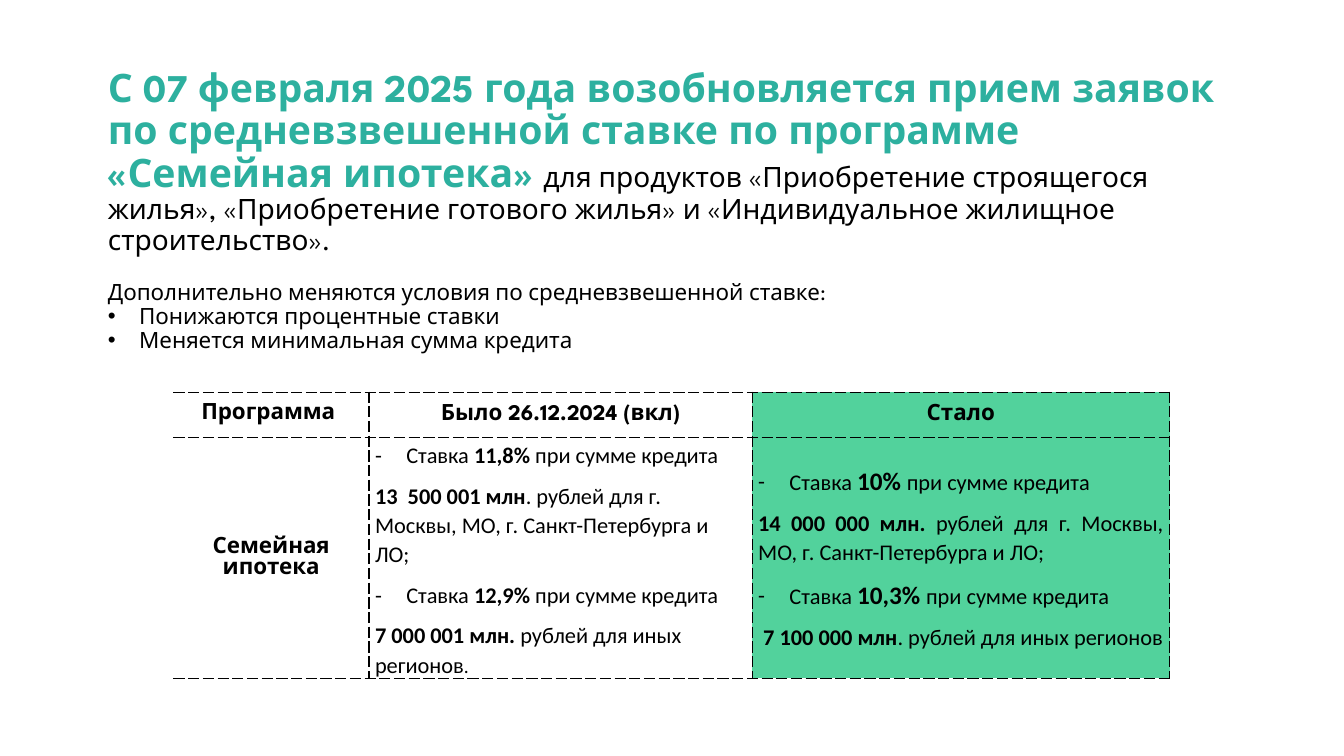
import pptx
import pptx.util
import pptx.dml.color
import pptx.enum.text
import pptx.oxml
import pptx.oxml.ns
from pptx.util import Inches

RGBColor = pptx.dml.color.RGBColor
TEAL = RGBColor(0x2D, 0xB0, 0x9F)
MINT = RGBColor(0x52, 0xD2, 0x9C)
BLACK = RGBColor(0, 0, 0)
ALIGN = pptx.enum.text.PP_ALIGN
ANCHOR = pptx.enum.text.MSO_ANCHOR
HEAD = "League Spartan"
BODY = "Calibri"
SPACE = pptx.oxml.ns.nsdecls("a")


def add_run(para, text, size, bold=False, font=HEAD, color=BLACK):
    run = para.add_run()
    run.text = text
    run.font.size = pptx.util.Pt(size)
    run.font.bold = bold
    run.font.name = font
    run.font.color.rgb = color


def set_bullet(para, mark, font):
    props = para._p.get_or_add_pPr()
    props.set("marL", str(Inches(0.31)))
    props.set("indent", str(-Inches(0.31)))
    props.append(pptx.oxml.parse_xml(f'<a:buFont {SPACE} typeface="{font}"/>'))
    props.append(pptx.oxml.parse_xml(f'<a:buChar {SPACE} char="{mark}"/>'))


deck = pptx.Presentation()
deck.slide_width, deck.slide_height = Inches(13.33), Inches(7.5)
slide = deck.slides.add_slide(deck.slide_layouts[5])

# Title with the list of changes
title = slide.shapes.title
title.left, title.top = Inches(0.97), Inches(0.63)
title.width, title.height = Inches(11.37), Inches(3.25)
frame = title.text_frame
frame.word_wrap = True
frame.auto_size = pptx.enum.text.MSO_AUTO_SIZE.SHAPE_TO_FIT_TEXT
frame.vertical_anchor = ANCHOR.TOP

lead = frame.paragraphs[0]
add_run(lead, "С 07 февраля 2025 года возобновляется прием заявок по средневзвешенной "
        "ставке по программе «Семейная ипотека» ", 28, True, color=TEAL)
add_run(lead, "для продуктов «Приобретение строящегося жилья», «Приобретение готового "
        "жилья» и «Индивидуальное жилищное строительство».", 20)

intro = frame.add_paragraph()
add_run(intro, "Дополнительно меняются условия по средневзвешенной ставке:", 16)
intro.space_before = pptx.util.Pt(18)
for text in ("Понижаются процентные ставки", "Меняется минимальная сумма кредита"):
    para = frame.add_paragraph()
    add_run(para, text, 16)
    para.line_spacing = 0.9
    set_bullet(para, "•", "Arial")
for para in frame.paragraphs:
    para.alignment = ALIGN.LEFT
    para.line_spacing = 0.9

# Table grid
grid = slide.shapes.add_table(2, 3, Inches(1.72), Inches(3.89), Inches(9.88), Inches(2.83))
table = grid.table
table.first_row = table.horz_banding = False
for col, width in zip(table.columns, (1.94, 3.8, 4.14)):
    col.width = Inches(width)
for row, height in zip(table.rows, (0.45, 2.38)):
    row.height = Inches(height)

# Cell fills and dashed borders, open on the left
for row in table.rows:
    for c, cell in enumerate(row.cells):
        cell.vertical_anchor = ANCHOR.MIDDLE
        cell.margin_left = cell.margin_right = Inches(0.06)
        cell.margin_top = cell.margin_bottom = Inches(0.03)
        props = cell._tc.get_or_add_tcPr()
        for side in "LRTB":
            if side == "L" and c == 0:
                line = f'<a:lnL {SPACE} w="0"><a:noFill/></a:lnL>'
            else:
                line = (f'<a:ln{side} {SPACE} w="12700"><a:solidFill><a:srgbClr val="{BLACK}"/>'
                        f'</a:solidFill><a:prstDash val="dash"/></a:ln{side}>')
            props.append(pptx.oxml.parse_xml(line))
        if c == 2:
            cell.fill.solid()
            cell.fill.fore_color.rgb = MINT
        else:
            cell.fill.background()

# Headings and program name: row, column, text, line spacing, space after
labels = (
    (0, 0, "Программа ", 0.7, 0),
    (0, 1, "Было 26.12.2024 (вкл)", 1.0, 0),
    (0, 2, "Стало", 1.0, 0),
    (1, 0, "Семейная ипотека", 1.07, 8),
)
for r, c, text, gap, below in labels:
    para = table.cell(r, c).text_frame.paragraphs[0]
    add_run(para, text, 16, True)
    para.alignment = ALIGN.CENTER
    para.line_spacing = gap
    para.space_after = pptx.util.Pt(below)

# Terms: each paragraph is a list of (text, size, bold) runs
before = (
    [("Ставка ", 16, False), ("11,8%", 16, True), (" при сумме кредита", 16, False)],
    [("13  500 001 млн", 16, True),
     (". рублей для г. Москвы, МО, г. Санкт-Петербурга и ЛО;", 16, False)],
    [("Ставка ", 16, False), ("12,9% ", 16, True), ("при сумме кредита", 16, False)],
    [("7 000 001 млн. ", 16, True), ("рублей для иных регионов", 16, False), (".", 14, False)],
)
after = (
    [("Ставка ", 16, False), ("10% ", 18, True), ("при сумме кредита ", 16, False)],
    [("14 000 000 млн. ", 16, True),
     ("рублей для г. Москвы, МО, г. Санкт-Петербурга и ЛО; ", 16, False)],
    [("Ставка ", 16, False), ("10,3% ", 18, True), ("при сумме кредита", 16, False)],
    [(" ", 16, False), ("7 100 000 млн", 16, True), (". рублей для иных регионов", 16, False)],
)
for c, terms, align in ((1, before, ALIGN.LEFT), (2, after, ALIGN.JUSTIFY)):
    frame = table.cell(1, c).text_frame
    for i, runs in enumerate(terms):
        para = frame.add_paragraph() if i else frame.paragraphs[0]
        para.alignment = align
        para.line_spacing = 1.07
        para.space_after = pptx.util.Pt(8)
        for text, size, bold in runs:
            add_run(para, text, size, bold, BODY)
        if i % 2 == 0:
            set_bullet(para, "-", BODY)

deck.save("out.pptx")
